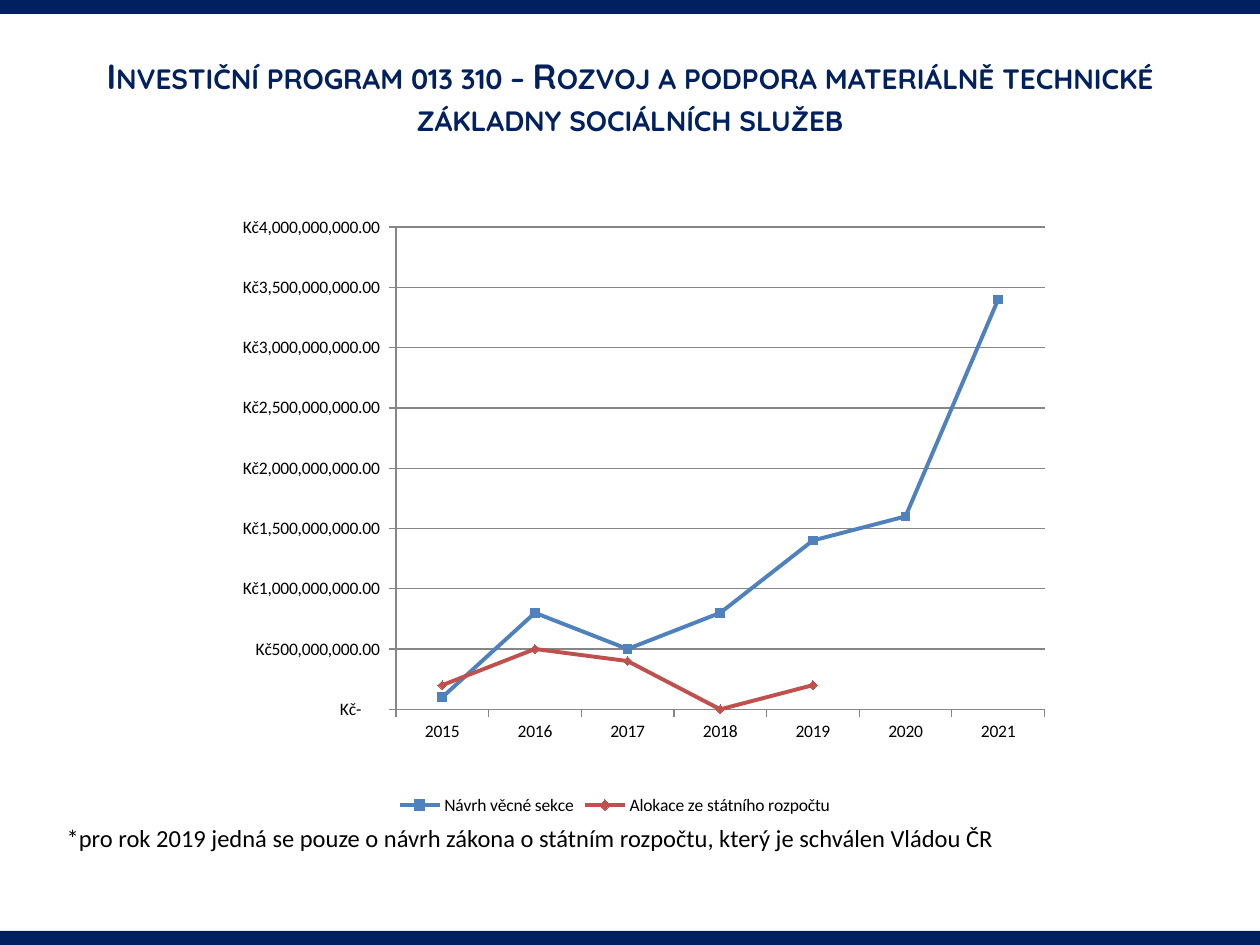
import pptx
import pptx.chart.data
import pptx.dml.color
import pptx.enum.chart
import pptx.enum.shapes
import pptx.enum.text
import pptx.oxml
import pptx.oxml.ns
import pptx.util

Pt = pptx.util.Pt
NAVY, BLACK, GREY = "002060", "000000", "868686"
YEARS = ["2015", "2016", "2017", "2018", "2019", "2020", "2021"]
MILLION = 1_000_000
MARKERS = pptx.enum.chart.XL_MARKER_STYLE
SERIES = [
    ("Návrh věcné sekce", [100, 800, 500, 800, 1400, 1600, 3400], "4F81BD", MARKERS.SQUARE),
    ("Alokace ze státního rozpočtu", [200, 500, 400, 0, 200, None, None], "C0504D", MARKERS.DIAMOND),
]
MONEY = r'_("Kč"* #,##0.00_);_("Kč"* \(#,##0.00\);_("Kč"* "-"??_);_(@_)'
CHART_WIDTH, CHART_HEIGHT = 538.6, 357
PLOT_AREA = {
    "x": 144.3 / CHART_WIDTH,
    "y": 18.2 / CHART_HEIGHT,
    "w": 370.6 / CHART_WIDTH,
    "h": 275.6 / CHART_HEIGHT,
}


def colour(value):
    """Turn a hex string into a colour."""
    return pptx.dml.color.RGBColor.from_string(value)


def paint(part, value):
    """Fill a shape or marker with one solid colour."""
    part.fill.solid()
    part.fill.fore_color.rgb = colour(value)


def style_font(font, name, size, value):
    """Set the face, size and colour of a font."""
    font.name = name
    font.size = Pt(size)
    font.color.rgb = colour(value)


def style_line(line, width, value):
    """Set the width and colour of a line."""
    line.width = Pt(width)
    line.color.rgb = colour(value)


def place(item, left, top, width, height):
    """Move and size an item in points."""
    item.left, item.top, item.width, item.height = map(Pt, (left, top, width, height))


def add_title(page, text):
    """Write the small-capital heading in the title placeholder."""
    title = page.shapes.title
    place(title, 36, 21.6, 648, 67)
    frame = title.text_frame
    frame.vertical_anchor = pptx.enum.text.MSO_ANCHOR.MIDDLE
    para = frame.paragraphs[0]
    para.alignment = pptx.enum.text.PP_ALIGN.CENTER
    span = para.add_run()
    span.text = text
    style_font(span.font, "Quicksand", 20, NAVY)
    span.font.bold = True
    span.font._element.set("cap", "small")


def add_band(page, top, height):
    """Add a full-width navy band."""
    band = page.shapes.add_shape(
        pptx.enum.shapes.MSO_SHAPE.RECTANGLE, 0, Pt(top), Pt(720), Pt(height))
    band.shadow.inherit = False
    paint(band, NAVY)
    band.line.fill.background()


def set_plot_area(chart, fractions):
    """Fix the inner plot area as fractions of the chart."""
    plot_area = chart._chartSpace.chart.plotArea
    for old in plot_area.findall(pptx.oxml.ns.qn("c:layout")):
        plot_area.remove(old)
    modes = "".join(f'<c:{key}Mode val="edge"/>' for key in "xy")
    sizes = "".join(f'<c:{key} val="{value}"/>' for key, value in fractions.items())
    plot_area.insert(0, pptx.oxml.parse_xml(
        f'<c:layout {pptx.oxml.ns.nsdecls("c")}><c:manualLayout>'
        f'<c:layoutTarget val="inner"/>{modes}{sizes}</c:manualLayout></c:layout>'))


def style_axis(axis):
    """Give an axis outside ticks and a thin grey line."""
    axis.major_tick_mark = pptx.enum.chart.XL_TICK_MARK.OUTSIDE
    axis.minor_tick_mark = pptx.enum.chart.XL_TICK_MARK.NONE
    style_line(axis.format.line, 0.75, GREY)


def add_budget_chart(page):
    """Add the line chart of proposed and allocated budgets."""
    data = pptx.chart.data.CategoryChartData(number_format=MONEY)
    data.categories = YEARS
    for name, values, _, _ in SERIES:
        data.add_series(name, [None if v is None else v * MILLION for v in values])
    chart = page.shapes.add_chart(
        pptx.enum.chart.XL_CHART_TYPE.LINE_MARKERS,
        Pt(82), Pt(111.6), Pt(CHART_WIDTH), Pt(CHART_HEIGHT), data).chart
    style_font(chart.font, "Calibri", 10, BLACK)
    chart.has_title = False
    chart.has_legend = True
    chart.legend.position = pptx.enum.chart.XL_LEGEND_POSITION.BOTTOM
    chart.legend.include_in_layout = False
    set_plot_area(chart, PLOT_AREA)

    style_axis(chart.category_axis)
    amounts = chart.value_axis
    style_axis(amounts)
    amounts.minimum_scale = 0
    amounts.maximum_scale = 4000 * MILLION
    amounts.major_unit = 500 * MILLION
    amounts.tick_labels.number_format = MONEY
    amounts.tick_labels.number_format_is_linked = False
    amounts.has_major_gridlines = True
    style_line(amounts.major_gridlines.format.line, 0.75, GREY)

    plot = chart.plots[0]
    plot.vary_by_categories = False
    for series, (_, _, value, marker) in zip(plot.series, SERIES):
        series.smooth = False
        style_line(series.format.line, 2.25, value)
        series.marker.style = marker
        series.marker.size = 5
        paint(series.marker.format, value)
        style_line(series.marker.format.line, 0.75, value)


def add_footnote(page, text):
    """Add the note below the chart."""
    box = page.shapes.add_textbox(Pt(31), Pt(466.6), Pt(666), Pt(24.5))
    frame = box.text_frame
    frame.word_wrap = True
    frame.auto_size = pptx.enum.text.MSO_AUTO_SIZE.SHAPE_TO_FIT_TEXT
    span = frame.paragraphs[0].add_run()
    span.text = text
    style_font(span.font, "Calibri", 14, BLACK)


def main():
    """Build and save the slide."""
    deck = pptx.Presentation()
    deck.slide_width, deck.slide_height = Pt(720), Pt(540)
    page = deck.slides.add_slide(deck.slide_layouts.get_by_name("Title Only"))
    add_title(page, "Investiční program 013 310 – Rozvoj a podpora materiálně "
                    "technické základny sociálních služeb")
    for top in (0, 532):
        add_band(page, top, 8)
    add_budget_chart(page)
    add_footnote(page, "*pro rok 2019 jedná se pouze o návrh zákona o státním "
                       "rozpočtu, který je schválen Vládou ČR")
    deck.save("out.pptx")


if __name__ == "__main__":
    main()
